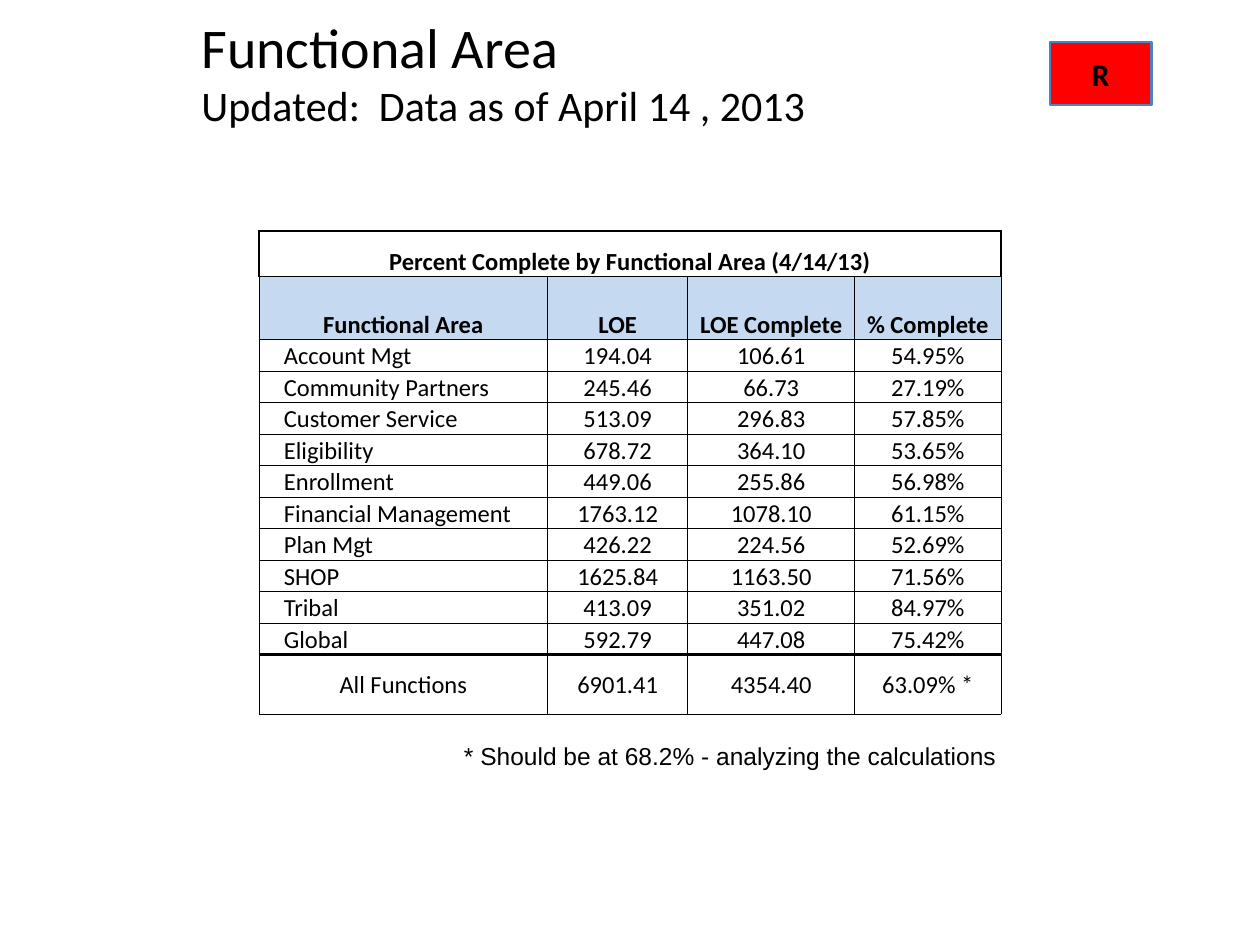
from typing import NamedTuple

from lxml import etree
from pptx import Presentation
from pptx.dml.color import RGBColor
from pptx.enum import shapes, text
from pptx.oxml import ns
from pptx.util import Pt

BLACK = "000000"
HEADER_BLUE = "C5D9F1"
THIN, MEDIUM, THICK = 0.5, 1, 2
COLUMN_WIDTHS = (165, 80, 95.5, 83.5)
TITLE_HEIGHT, HEADER_HEIGHT, AREA_HEIGHT, TOTAL_HEIGHT = 26, 36, 18, 34
TABLE_TITLE = "Percent Complete by Functional Area (4/14/13)"
HEADERS = ("Functional Area", "LOE", "LOE Complete", "% Complete")


class Area(NamedTuple):
    name: str
    loe: str
    loe_complete: str
    percent: str


class CellStyle(NamedTuple):
    bold: bool = False
    fill: str | None = None
    align: text.PP_ALIGN = text.PP_ALIGN.CENTER
    anchor: text.MSO_ANCHOR = text.MSO_ANCHOR.BOTTOM
    left_margin: float = 0.75
    side: float = THIN
    top: float = THIN
    bottom: float = THIN


AREAS = (
    Area("Account Mgt", "194.04", "106.61", "54.95%"),
    Area("Community Partners", "245.46", "66.73", "27.19%"),
    Area("Customer Service", "513.09", "296.83", "57.85%"),
    Area("Eligibility", "678.72", "364.10", "53.65%"),
    Area("Enrollment", "449.06", "255.86", "56.98%"),
    Area("Financial Management", "1763.12", "1078.10", "61.15%"),
    Area("Plan Mgt", "426.22", "224.56", "52.69%"),
    Area("SHOP", "1625.84", "1163.50", "71.56%"),
    Area("Tribal", "413.09", "351.02", "84.97%"),
    Area("Global", "592.79", "447.08", "75.42%"),
)
TOTAL = Area("All Functions", "6901.41", "4354.40", "63.09% *")

TITLE_STYLE = CellStyle(bold=True, side=MEDIUM, top=MEDIUM)
HEADER_STYLE = CellStyle(bold=True, fill=HEADER_BLUE)
VALUE_STYLE = CellStyle()
NAME_STYLE = CellStyle(align=text.PP_ALIGN.LEFT, left_margin=14.25)
TOTAL_STYLE = CellStyle(anchor=text.MSO_ANCHOR.MIDDLE, top=THICK)


def color(value: str) -> RGBColor:
    return RGBColor.from_string(value)


def set_font(para, size: float, name: str = "Calibri", bold: bool = False) -> None:
    para.font.name = name
    para.font.size = Pt(size)
    para.font.bold = bold
    para.font.color.rgb = color(BLACK)


def add_border(cell, edge: str, width: float) -> None:
    properties = cell._tc.get_or_add_tcPr()
    line = etree.SubElement(properties, ns.qn(f"a:{edge}"), w=str(int(Pt(width))))
    fill = etree.SubElement(line, ns.qn("a:solidFill"))
    etree.SubElement(fill, ns.qn("a:srgbClr"), val=BLACK)


def style_cell(cell, style: CellStyle) -> None:
    """Set borders, then fill, as the file format orders them."""
    cell.margin_left = Pt(style.left_margin)
    cell.margin_right = cell.margin_top = Pt(0.75)
    cell.margin_bottom = Pt(0)
    cell.vertical_anchor = style.anchor
    add_border(cell, "lnL", style.side)
    add_border(cell, "lnR", style.side)
    add_border(cell, "lnT", style.top)
    add_border(cell, "lnB", style.bottom)
    if style.fill:
        cell.fill.solid()
        cell.fill.fore_color.rgb = color(style.fill)
    else:
        cell.fill.background()


def fill_cell(cell, content: str, style: CellStyle) -> None:
    style_cell(cell, style)
    para = cell.text_frame.paragraphs[0]
    para.text = content
    para.alignment = style.align
    set_font(para, 14, bold=style.bold)


def add_text_box(page, left: float, top: float, width: float, height: float):
    box = page.shapes.add_textbox(Pt(left), Pt(top), Pt(width), Pt(height))
    return box.text_frame


def add_heading(page) -> None:
    frame = add_text_box(page, 108, 36, 378, 42)
    frame.word_wrap = True
    frame.vertical_anchor = text.MSO_ANCHOR.BOTTOM
    frame.text = "Functional Area\nUpdated:  Data as of April 14 , 2013"
    for para, size in zip(frame.paragraphs, (32, 24)):
        set_font(para, size)


def add_status(page) -> None:
    box = page.shapes.add_shape(
        shapes.MSO_SHAPE.RECTANGLE, Pt(600), Pt(24), Pt(58), Pt(36)
    )
    box.shadow.inherit = False
    box.fill.solid()
    box.fill.fore_color.rgb = color("FF0000")
    box.line.color.rgb = color("4F81BD")
    box.line.width = Pt(1.5)
    box.text_frame.vertical_anchor = text.MSO_ANCHOR.MIDDLE
    para = box.text_frame.paragraphs[0]
    para.text = "R"
    para.alignment = text.PP_ALIGN.CENTER
    set_font(para, 18, bold=True)


def add_progress_table(page) -> None:
    heights = (TITLE_HEIGHT, HEADER_HEIGHT, *[AREA_HEIGHT] * len(AREAS), TOTAL_HEIGHT)
    frame = page.shapes.add_table(
        len(heights), len(COLUMN_WIDTHS),
        Pt(148), Pt(132), Pt(sum(COLUMN_WIDTHS)), Pt(sum(heights)),
    )
    table = frame.table
    table.first_row = table.horz_banding = False
    for column, width in zip(table.columns, COLUMN_WIDTHS):
        column.width = Pt(width)
    for row, height in zip(table.rows, heights):
        row.height = Pt(height)

    title_cells = list(table.rows[0].cells)
    title_cells[0].merge(title_cells[-1])
    fill_cell(title_cells[0], TABLE_TITLE, TITLE_STYLE)
    for cell in title_cells[1:]:
        style_cell(cell, TITLE_STYLE)

    for row_index, values in enumerate((HEADERS, *AREAS, TOTAL), start=1):
        for column_index, value in enumerate(values):
            if values is HEADERS:
                style = HEADER_STYLE
            elif values is TOTAL:
                style = TOTAL_STYLE
            else:
                style = VALUE_STYLE if column_index else NAME_STYLE
                if values is AREAS[-1]:
                    style = style._replace(bottom=THICK)
            fill_cell(table.cell(row_index, column_index), value, style)


def add_footnote(page) -> None:
    frame = add_text_box(page, 258, 420, 320, 24.5)
    frame.word_wrap = False
    frame.auto_size = text.MSO_AUTO_SIZE.SHAPE_TO_FIT_TEXT
    para = frame.paragraphs[0]
    para.text = "* Should be at 68.2% - analyzing the calculations"
    set_font(para, 14, name="Arial")


def main() -> None:
    deck = Presentation()
    deck.slide_width, deck.slide_height = Pt(720), Pt(540)
    page = deck.slides.add_slide(deck.slide_layouts[6])
    add_heading(page)
    add_status(page)
    add_progress_table(page)
    add_footnote(page)
    deck.save("out.pptx")


if __name__ == "__main__":
    main()
